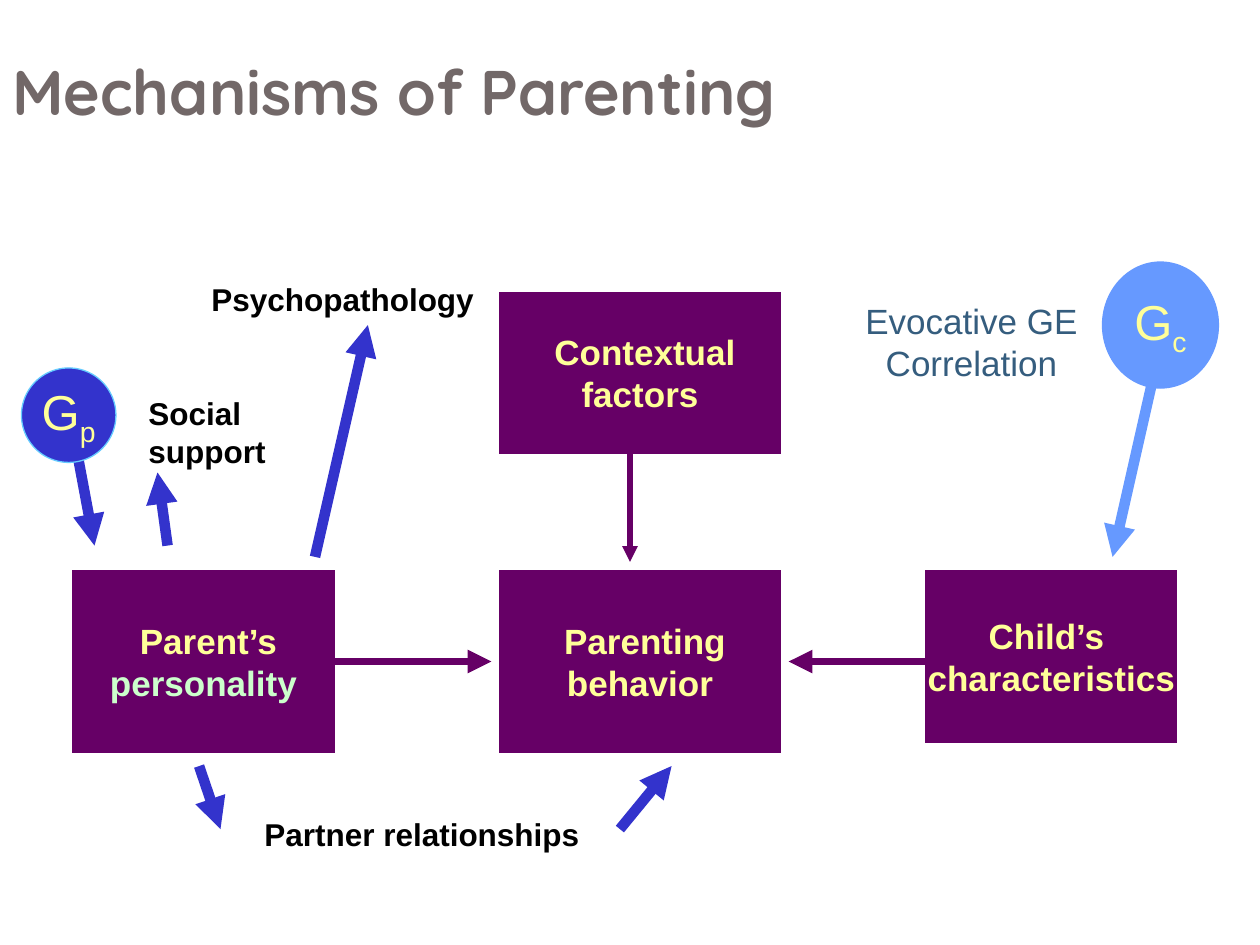
from lxml import etree
from pptx import Presentation
from pptx.dml.color import RGBColor
from pptx.enum import shapes, text
from pptx.oxml import ns
from pptx.util import Inches, Pt

PURPLE = RGBColor(0x66, 0x00, 0x66)
BLUE = RGBColor(0x33, 0x33, 0xCC)
LIGHT_BLUE = RGBColor(0x66, 0x99, 0xFF)
CYAN = RGBColor(0x66, 0xCC, 0xFF)
YELLOW = RGBColor(0xFF, 0xFF, 0x99)
MINT = RGBColor(0xCC, 0xFF, 0xCC)
STEEL = RGBColor(0x35, 0x5D, 0x7E)
TAUPE = RGBColor(0x72, 0x68, 0x68)
BLACK = RGBColor(0x00, 0x00, 0x00)


def add_run(paragraph, words, size, color, bold=False, font="Arial"):
    run = paragraph.add_run()
    run.text = words
    run.font.name = font
    run.font.size = Pt(size)
    run.font.bold = bold
    run.font.color.rgb = color
    return run


def add_paragraphs(frame, count):
    return [frame.paragraphs[0]] + [frame.add_paragraph() for _ in range(count - 1)]


def add_label(slide, box, lines, size=18, color=BLACK, bold=True, wrap=False, align=None):
    shape = slide.shapes.add_textbox(*map(Inches, box))
    frame = shape.text_frame
    frame.word_wrap = wrap
    frame.auto_size = text.MSO_AUTO_SIZE.SHAPE_TO_FIT_TEXT
    for paragraph, line in zip(add_paragraphs(frame, len(lines)), lines):
        paragraph.alignment = align
        add_run(paragraph, line, size, color, bold)


def add_filled(slide, kind, box, fill, line, width):
    shape = slide.shapes.add_shape(kind, *map(Inches, box))
    shape.shadow.inherit = False
    shape.fill.solid()
    shape.fill.fore_color.rgb = fill
    shape.line.color.rgb = line
    shape.line.width = Pt(width)
    etree.SubElement(shape.line._get_or_add_ln(), ns.qn("a:miter"), lim="800000")
    shape.text_frame.word_wrap = False
    shape.text_frame.vertical_anchor = text.MSO_ANCHOR.MIDDLE
    return shape


def add_factor(slide, box, lines, colors=(YELLOW, YELLOW), right_to_left=True):
    shape = add_filled(slide, shapes.MSO_SHAPE.RECTANGLE, box, PURPLE, PURPLE, 2.25)
    paragraphs = add_paragraphs(shape.text_frame, len(lines))
    for paragraph, line, color in zip(paragraphs, lines, colors):
        paragraph.alignment = text.PP_ALIGN.CENTER
        if right_to_left:
            paragraph._p.get_or_add_pPr().set("rtl", "1")
        add_run(paragraph, line, 20, color, True)


def add_gene(slide, box, subscript, fill, line):
    shape = add_filled(slide, shapes.MSO_SHAPE.OVAL, box, fill, line, 0.75)
    paragraph = shape.text_frame.paragraphs[0]
    paragraph.alignment = text.PP_ALIGN.CENTER
    add_run(paragraph, "G", 28, YELLOW)
    run = add_run(paragraph, subscript, 28, YELLOW)
    run._r.get_or_add_rPr().set("baseline", "-25000")


def add_arrow(slide, start, end, color=BLUE, width=6):
    arrow = slide.shapes.add_connector(
        shapes.MSO_CONNECTOR.STRAIGHT, *map(Inches, (*start, *end)))
    arrow.line.color.rgb = color
    arrow.line.width = Pt(width)
    etree.SubElement(arrow.line._get_or_add_ln(), ns.qn("a:tailEnd"), type="triangle")
    etree.SubElement(arrow._element.spPr, ns.qn("a:effectLst"))


def add_title(slide, box):
    shape = slide.shapes.add_textbox(*map(Inches, box))
    frame = shape.text_frame
    frame.word_wrap = True
    frame.vertical_anchor = text.MSO_ANCHOR.MIDDLE
    add_run(frame.paragraphs[0], "Mechanisms of Parenting", 36, TAUPE, True, "Quicksand")


def add_model(slide, box):
    left, top, width, height = box
    row_height, gap = 1.42, 0.08
    row = top + height - row_height
    middle, middle_width = left + 3.39, 2.2
    parent_width, child_width, context_height = 2.05, 1.97, 1.26
    child = left + width - child_width
    arrow_y = row + row_height / 2

    add_factor(slide, (middle, row, middle_width, row_height), ["Parenting ", "behavior"])
    add_factor(slide, (left, row, parent_width, row_height),
               ["Parent’s ", "personality"], (YELLOW, MINT))
    add_factor(slide, (middle, top, middle_width, context_height),
               ["Contextual ", "factors"])
    add_factor(slide, (child, row, child_width, 1.34),
               ["Child’s ", "characteristics"], right_to_left=False)

    add_arrow(slide, (left + parent_width, arrow_y), (middle - gap, arrow_y), PURPLE, 4.5)
    add_arrow(slide, (child, arrow_y), (middle + middle_width + gap, arrow_y), PURPLE, 4.5)
    add_arrow(slide, (middle + 1.02, top + context_height),
              (middle + 1.02, row - gap), PURPLE, 3)


def add_parent_influences(slide, box):
    left, top, _, height = box
    bottom = top + height
    arrows = [
        ((2.33, 2.25), (2.75, 0.41)),
        ((0.41, 1.25), (0.58, 2.16)),
        ((1.16, 2.16), (1.08, 1.58)),
    ]
    for start, end in arrows:
        add_arrow(slide, (left + start[0], top + start[1]), (left + end[0], top + end[1]))
    add_gene(slide, (left, top + 0.75, 0.75, 0.75), "p", BLUE, CYAN)
    add_label(slide, (left + 0.91, top + 0.91, 1.14, 0.71), ["Social", "support"])
    add_label(slide, (left + 1.41, top, 2.32, 0.4), ["Psychopathology"])

    add_label(slide, (left + 1.83, bottom - 0.4, 2.7, 0.4), ["Partner relationships"])
    add_arrow(slide, (left + 1.41, bottom - 0.74), (left + 1.58, bottom - 0.24))
    add_arrow(slide, (left + 4.75, bottom - 0.24), (left + 5.16, bottom - 0.74))


def add_child_influence(slide, box):
    left, top, width, height = box
    gene_width = 0.92
    gene = left + width - gene_width
    add_label(slide, (left, top + 0.25, gene - left, 0.77), ["Evocative GE Correlation"],
              20, STEEL, False, True, text.PP_ALIGN.CENTER)
    add_arrow(slide, (gene + 0.42, top + 0.84), (gene + 0.08, top + height), LIGHT_BLUE)
    add_gene(slide, (gene, top, gene_width, 1), "c", LIGHT_BLUE, LIGHT_BLUE)


def main():
    presentation = Presentation()
    presentation.slide_width = Inches(10)
    presentation.slide_height = Inches(7.5)
    slide = presentation.slides.add_slide(presentation.slide_layouts[6])
    add_title(slide, (0, 0.3, 9, 0.83))
    add_model(slide, (0.59, 2.33, 8.74, 3.63))
    add_parent_influences(slide, (0.17, 2.17, 5.16, 4.65))
    add_child_influence(slide, (6.67, 2.08, 3, 2.34))
    presentation.save("out.pptx")


if __name__ == "__main__":
    main()
